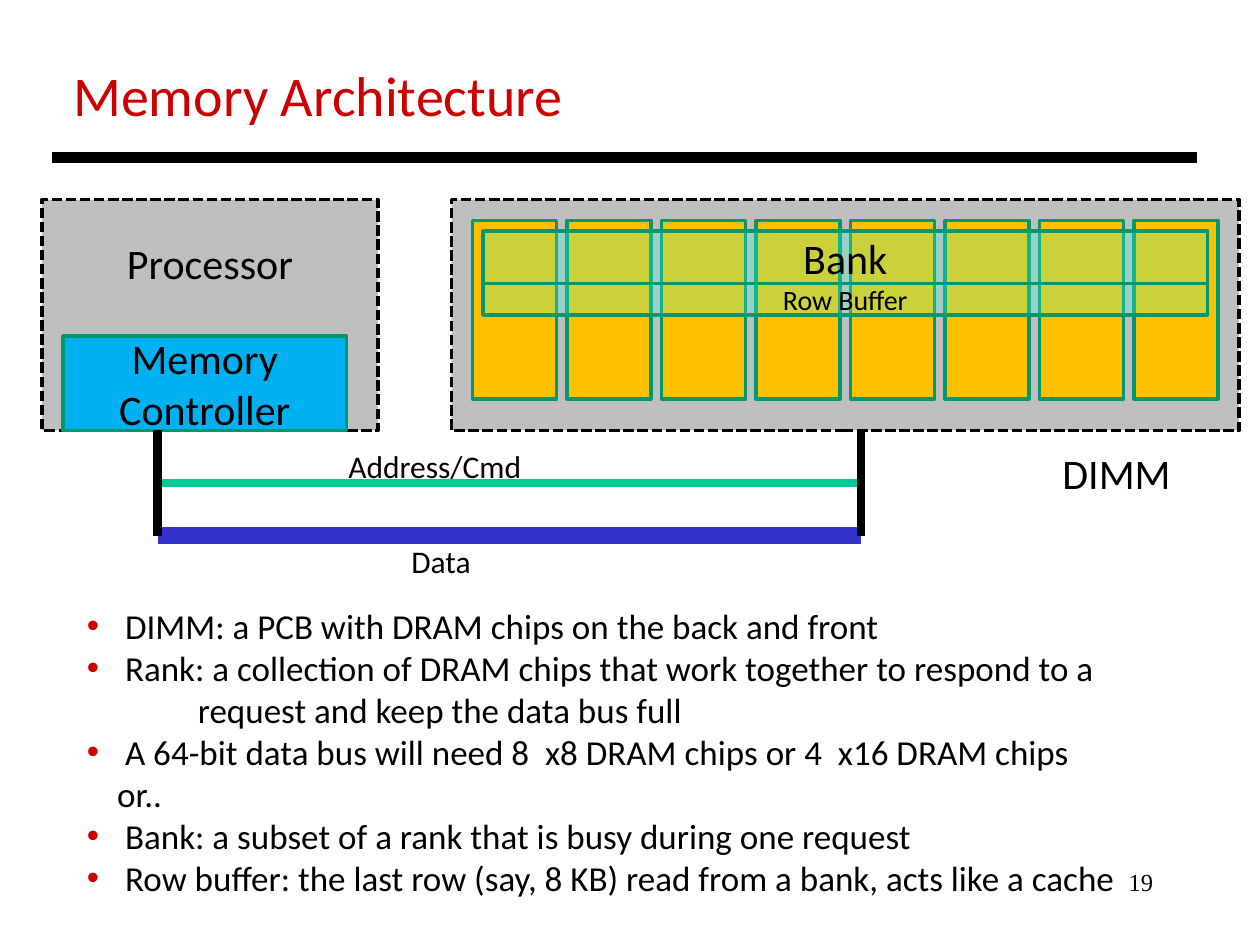
from lxml.etree import SubElement
from pptx import Presentation
from pptx.dml.color import RGBColor as RGB
from pptx.enum.dml import MSO_LINE as DASH
from pptx.enum.shapes import MSO_CONNECTOR as CONN, MSO_SHAPE as SHAPE
from pptx.enum.text import MSO_ANCHOR as ANCHOR, MSO_AUTO_SIZE as AUTO, PP_ALIGN as ALIGN
from pptx.oxml.ns import qn
from pptx.util import Inches, Pt

COLORS = {
    "black": "000000", "red": "CC0000", "gray": "BFBFBF", "blue": "00B0F0",
    "gold": "FFC000", "mint": "47FFD1", "edge": "009771",
    "address": "00C896", "data": "3333CC",
}
RGBS = {name: RGB.from_string(value) for name, value in COLORS.items()}

prs = Presentation()
prs.slide_width, prs.slide_height = Inches(10), Inches(7.5)
COL, ROW = prs.slide_width / 120, prs.slide_height / 90
s = prs.slides.add_slide(prs.slide_layouts[6])


def grid(x, y, w, h):
    return int(x * COL), int(y * ROW), int(w * COL), int(h * ROW)


def write(p, text, size, color="black", font="Calibri", align=ALIGN.LEFT):
    p.alignment = align
    r = p.add_run()
    r.text = text
    for key, value in {"name": font, "size": Pt(size)}.items():
        setattr(r.font, key, value)
    r.font.color.rgb = RGBS[color]


labels = [
    ("Memory Architecture", 5.8, 5.2, 49.4, 7.7, 32, "red"),
    ("Address/Cmd", 32, 42, 19, 4.8, 18, "black"),
    ("Data", 38, 51, 8.2, 4.8, 18, "black"),
    ("DIMM", 100, 42, 13.2, 6.1, 24, "black"),
]
for text, x, y, w, h, size, color in labels:
    tf = s.shapes.add_textbox(*grid(x, y, w, h)).text_frame
    tf.word_wrap, tf.auto_size = False, AUTO.SHAPE_TO_FIT_TEXT
    write(tf.paragraphs[0], text, size, color)

tf = s.shapes.add_textbox(*grid(86, 82, 25, 6)).text_frame
tf.word_wrap = True
write(tf.paragraphs[0], "19", 14, font="Times New Roman", align=ALIGN.RIGHT)

chips = [("", 45 + 9 * i, 21, 8, 17, "gold", "edge", 0, None) for i in range(8)]
boxes = [
    ("Processor", 4, 19, 32, 22, "gray", "black", 24, None),
    ("Memory Controller", 6, 32, 27, 9, "blue", "edge", 24, None),
    ("", 43, 19, 75, 22, "gray", "black", 0, None),
    *chips,
    ("Bank", 46, 22, 69, 5, "mint", "edge", 24, 28),
    ("Row Buffer", 46, 27, 69, 3, "mint", "edge", 16, 28),
]
for text, x, y, w, h, fill, line, size, alpha in boxes:
    sp = s.shapes.add_shape(SHAPE.RECTANGLE, *grid(x, y, w, h))
    sp.shadow.inherit = False
    sp.fill.solid()
    sp.fill.fore_color.rgb = RGBS[fill]
    sp.line.color.rgb, sp.line.width = RGBS[line], Pt(2)
    if line == "black":
        sp.line.dash_style = DASH.SQUARE_DOT
    if alpha:
        clr = sp._element.spPr.find(qn("a:solidFill"))[0]
        SubElement(clr, qn("a:alpha"), val=str(alpha * 1000))
    if text:
        tf = sp.text_frame
        tf.word_wrap, tf.vertical_anchor = True, ANCHOR.MIDDLE
        if text == "Processor":
            tf.vertical_anchor, tf.margin_top = ANCHOR.TOP, int(3.6 * ROW)
        write(tf.paragraphs[0], text, size, align=ALIGN.CENTER)

lines = [
    (5, 15, 114, 15, "black", 6),
    (15, 46, 82, 46, "address", 5),
    (15, 51, 82, 51, "data", 10),
    (15, 41, 15, 51, "black", 5),
    (82, 41, 82, 51, "black", 5),
]
for x1, y1, x2, y2, color, width in lines:
    sp = s.shapes.add_connector(CONN.STRAIGHT, *grid(x1, y1, x2, y2))
    sp.line.color.rgb, sp.line.width = RGBS[color], Pt(width)
    SubElement(sp._element.spPr, qn("a:effectLst"))

notes = [
    (True, " DIMM: a PCB with DRAM chips on the back and front"),
    (True, " Rank: a collection of DRAM chips that work together to respond to a"),
    (False, "request and keep the data bus full"),
    (True, " A 64-bit data bus will need 8  x8 DRAM chips or 4  x16 DRAM chips or.."),
    (True, " Bank: a subset of a rank that is busy during one request"),
    (True, " Row buffer: the last row (say, 8 KB) read from a bank, acts like a cache"),
]
tf = s.shapes.add_textbox(*grid(7.1, 57, 100.6, 25.4)).text_frame
tf.word_wrap = True
for i, (bullet, text) in enumerate(notes):
    p = tf.paragraphs[0] if i == 0 else tf.add_paragraph()
    write(p, text, 20)
    pPr = p._p.get_or_add_pPr()
    pPr.set("marL", str(Inches(0.24 if bullet else 0.88)))
    if bullet:
        pPr.set("indent", str(-Inches(0.24)))
        SubElement(SubElement(pPr, qn("a:buClr")), qn("a:srgbClr"), val=COLORS["red"])
        SubElement(pPr, qn("a:buFont"), typeface="Arial")
        SubElement(pPr, qn("a:buChar"), char="•")

prs.save("out.pptx")
